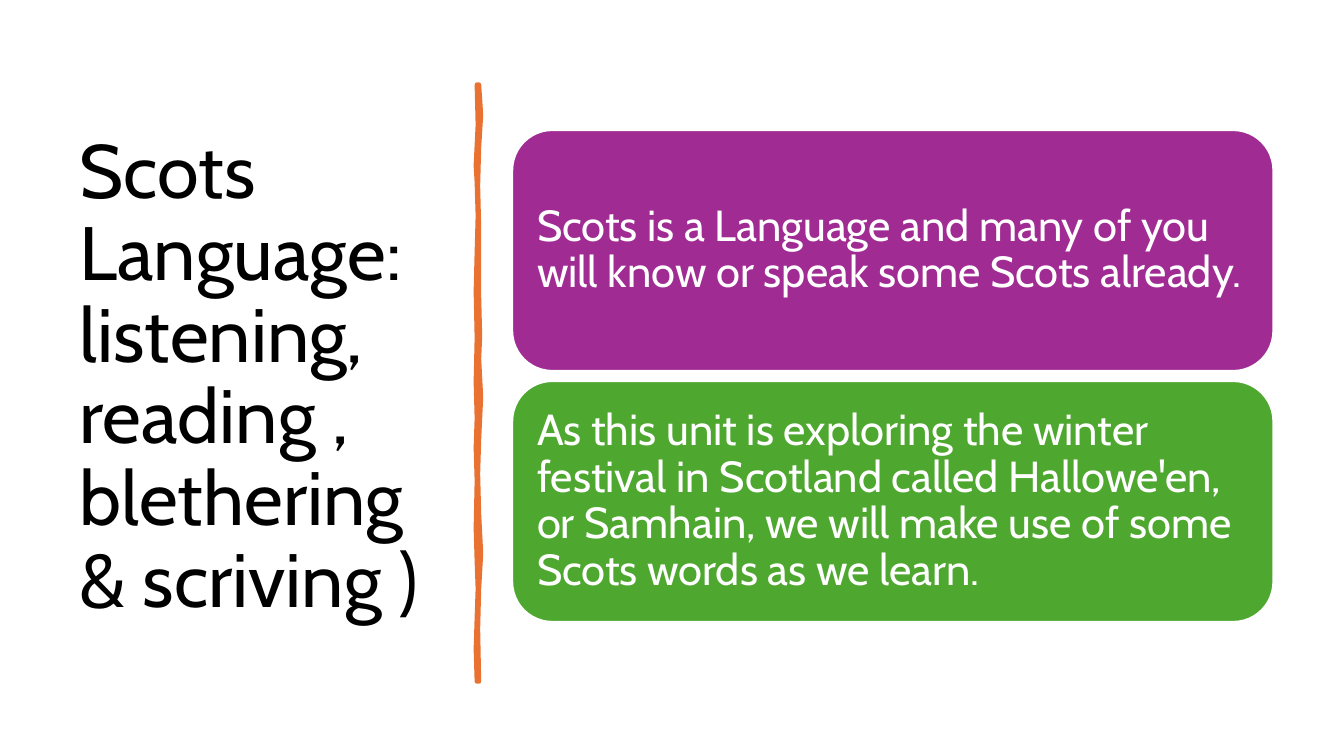
from pptx import Presentation
from pptx.dml.color import RGBColor
from pptx.enum.shapes import MSO_SHAPE
from pptx.enum.text import MSO_ANCHOR, MSO_AUTO_SIZE, PP_ALIGN
from pptx.util import Inches, Pt

ROUNDED = MSO_SHAPE.ROUNDED_RECTANGLE
MIDDLE = MSO_ANCHOR.MIDDLE
NO_AUTOFIT = MSO_AUTO_SIZE.NONE
LEFT = PP_ALIGN.LEFT

BLACK = RGBColor(0x00, 0x00, 0x00)
WHITE = RGBColor(0xFF, 0xFF, 0xFF)
ORANGE = RGBColor(0xE9, 0x71, 0x32)
PURPLE = RGBColor(0xA0, 0x2B, 0x93)
GREEN = RGBColor(0x4E, 0xA7, 0x2E)

FONT = "Cabin"
TITLE = "Scots Language: \vlistening, reading , blethering & scriving )"
CARDS = [
    ("Scots is a Language and many of you will know or speak some Scots already.", PURPLE),
    (
        "As this unit is exploring the winter festival in Scotland called Hallowe'en, "
        "or Samhain, we will make use of some Scots words as we learn.",
        GREEN,
    ),
]
RIGHT_EDGE = [
    (0.04, 0), (0.06, 0.3), (0.04, 0.62), (0.03, 1.0), (0.04, 1.42),
    (0.04, 2.1), (0.05, 2.5), (0.04, 2.72), (0.06, 3.1), (0.04, 3.52),
    (0.03, 3.86), (0.04, 4.26), (0.06, 4.65), (0.04, 5.0), (0.03, 5.4), (0.04, 5.92),
]
LEFT_EDGE = [
    (0.02, 5.92), (0.01, 5.6), (0.02, 5.29), (0.03, 5.0), (0.02, 4.73),
    (0.01, 4.4), (0.02, 3.93), (0.01, 3.6), (0.02, 3.31), (0.01, 2.95),
    (0.02, 2.51), (0.01, 2.05), (0.02, 1.66), (0.03, 1.3), (0.02, 0.97),
    (0.01, 0.8), (0.03, 0.4), (0.02, 0),
]


def format_text(shape, text, size, color, inset_x, inset_y):
    frame = shape.text_frame
    frame.text = text
    frame_format = {
        "word_wrap": True,
        "auto_size": NO_AUTOFIT,
        "vertical_anchor": MIDDLE,
        "margin_left": Inches(inset_x),
        "margin_right": Inches(inset_x),
        "margin_top": Inches(inset_y),
        "margin_bottom": Inches(inset_y),
    }
    for name, value in frame_format.items():
        setattr(frame, name, value)
    paragraph = frame.paragraphs[0]
    paragraph.alignment = LEFT
    paragraph.line_spacing = 0.9
    for run in paragraph.runs:
        for name, value in {"name": FONT, "size": Pt(size), "bold": False}.items():
            setattr(run.font, name, value)
        run.font.color.rgb = color


def place_title(slide, left, top, width, height):
    title = slide.shapes.title
    box = {"left": left, "top": top, "width": width, "height": height}
    for name, value in box.items():
        setattr(title, name, Inches(value))
    format_text(title, TITLE, 54, BLACK, 0.1, 0.05)


def draw_divider(slide, left, top):
    points = [(Inches(left + x), Inches(top + y)) for x, y in RIGHT_EDGE + LEFT_EDGE]
    builder = slide.shapes.build_freeform(*points[0])
    builder.add_line_segments(points[1:], close=True)
    divider = builder.convert_to_shape()
    divider.shadow.inherit = False
    divider.fill.solid()
    divider.fill.fore_color.rgb = ORANGE
    divider.line.color.rgb = ORANGE
    divider.line.width = Pt(3.25)


def draw_cards(slide, left, top, width, height, gap):
    card_height = (height - gap * (len(CARDS) - 1)) / len(CARDS)
    for index, (text, color) in enumerate(CARDS):
        card_top = top + index * (card_height + gap)
        card = slide.shapes.add_shape(
            ROUNDED, Inches(left), Inches(card_top), Inches(width), Inches(card_height)
        )
        card.shadow.inherit = False
        card.fill.solid()
        card.fill.fore_color.rgb = color
        card.line.color.rgb = WHITE
        card.line.width = Pt(1.5)
        format_text(card, text, 31, WHITE, 0.13, 0.13)


def main():
    presentation = Presentation()
    presentation.slide_width = Inches(13.33)
    presentation.slide_height = Inches(7.5)
    slide = presentation.slides.add_slide(presentation.slide_layouts[5])
    place_title(slide, 0.69, 0.7, 3.74, 6.11)
    draw_divider(slide, 4.71, 0.84)
    draw_cards(slide, 5.08, 1.29, 7.55, 4.88, 0.1)
    presentation.save("out.pptx")


if __name__ == "__main__":
    main()
